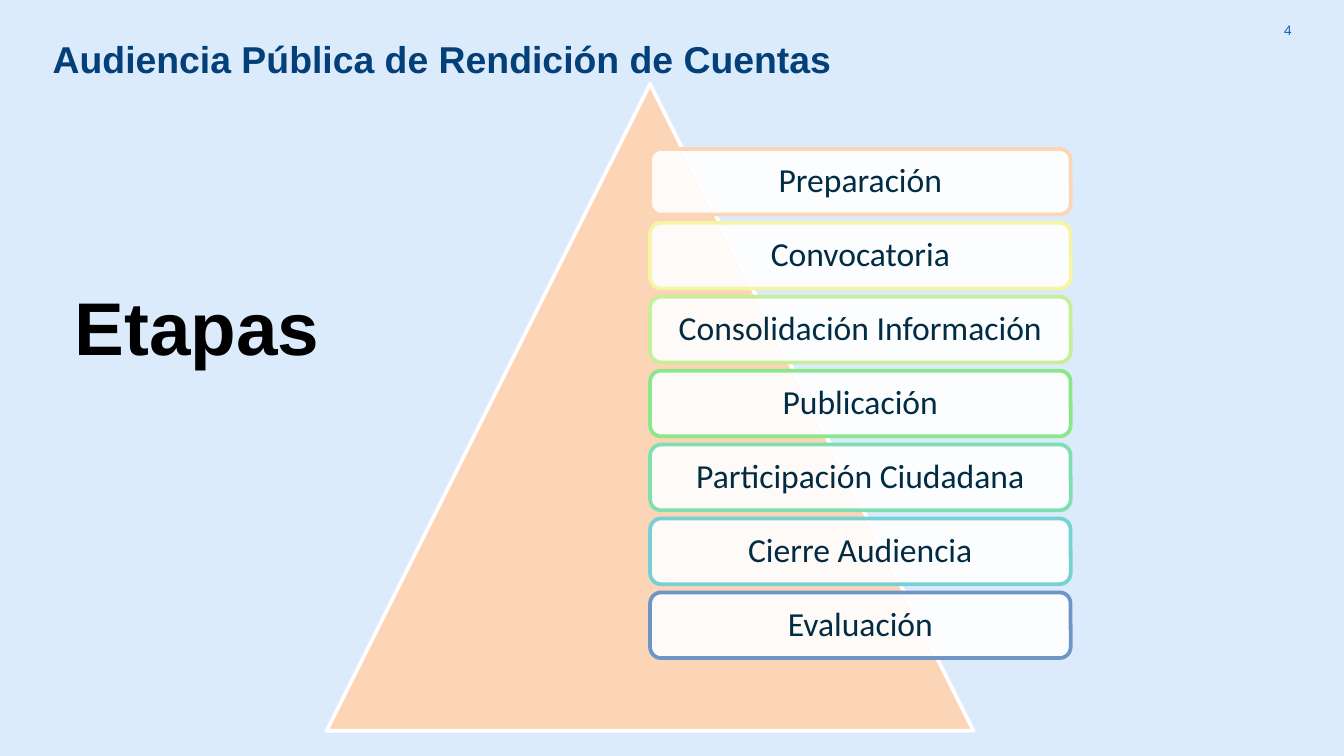
from dataclasses import dataclass

from lxml.etree import SubElement
from pptx import Presentation
from pptx.dml.color import RGBColor
from pptx.enum.shapes import MSO_SHAPE as Shape
from pptx.enum.text import MSO_ANCHOR as Anchor, MSO_AUTO_SIZE as AutoSize, PP_ALIGN as Align
from pptx.oxml.ns import qn
from pptx.util import Pt


@dataclass(frozen=True)
class Theme:
    background: str = "DCEBFB"
    title: str = "033F78"
    heading: str = "000000"
    number: str = "0054BC"
    stage: str = "022B44"
    white: str = "FFFFFF"
    pyramid: str = "FBD5B5"
    title_size: int = 20
    heading_size: int = 40
    stage_size: int = 18
    number_size: int = 7
    outline: int = 2


STAGES = [
    ("Preparación", "FBD5B5"),
    ("Convocatoria", "F6F4A5"),
    ("Consolidación Información", "C5F097"),
    ("Publicación", "8AE88A"),
    ("Participación Ciudadana", "7FDFB0"),
    ("Cierre Audiencia", "75D1D4"),
    ("Evaluación", "6D96C7"),
]


def rgb(value):
    return RGBColor.from_string(value)


def write(shape, text, *, size, color, font="Arial", bold=False, align=Align.LEFT,
          anchor=Anchor.TOP, wrap=True, margins=(7.2, 3.6), spacing=None):
    frame = shape.text_frame
    frame.auto_size = AutoSize.NONE
    frame.word_wrap = wrap
    frame.vertical_anchor = anchor
    frame.margin_left = frame.margin_right = Pt(margins[0])
    frame.margin_top = frame.margin_bottom = Pt(margins[1])
    frame.text = text
    paragraph = frame.paragraphs[0]
    paragraph.alignment = align
    paragraph.line_spacing = spacing
    run_font = paragraph.runs[0].font
    run_font.name, run_font.size, run_font.bold = font, Pt(size), bold
    run_font.color.rgb = rgb(color)


class SlideBuilder:
    def __init__(self, slide, theme):
        self.slide = slide
        self.theme = theme
        slide.background.fill.solid()
        slide.background.fill.fore_color.rgb = rgb(theme.background)

    def title(self, text, left, top, width, height, **style):
        title = self.slide.shapes.title
        title.left, title.top, title.width, title.height = map(Pt, (left, top, width, height))
        write(title, text, **style)

    def text(self, text, left, top, width, height, **style):
        box = self.slide.shapes.add_textbox(*map(Pt, (left, top, width, height)))
        write(box, text, **style)

    def shape(self, kind, left, top, width, height, fill, line, opacity=100):
        shape = self.slide.shapes.add_shape(kind, *map(Pt, (left, top, width, height)))
        shape.shadow.inherit = False
        shape.fill.solid()
        shape.fill.fore_color.rgb = rgb(fill)
        if opacity < 100:
            color = shape.fill._xPr.find(qn("a:solidFill"))[0]
            SubElement(color, qn("a:alpha"), val=str(opacity * 1000))
        shape.line.color.rgb = rgb(line)
        shape.line.width = Pt(self.theme.outline)
        return shape

    def stage(self, name, accent, left, top, width, height):
        card = self.shape(Shape.ROUNDED_RECTANGLE, left, top, width, height,
                          self.theme.white, accent, opacity=90)
        write(card, name, size=self.theme.stage_size, color=self.theme.stage, font="Calibri",
              align=Align.CENTER, anchor=Anchor.MIDDLE, margins=(6.5, 5), spacing=0.9)


def main():
    theme = Theme()
    deck = Presentation()
    deck.slide_width, deck.slide_height = Pt(720), Pt(405)
    page = SlideBuilder(deck.slides.add_slide(deck.slide_layouts[5]), theme)

    # Page number, title and heading
    page.text("4", 656, 0.7, 43, 31, size=theme.number_size, color=theme.number,
              font="Open Sans", align=Align.RIGHT, anchor=Anchor.MIDDLE, margins=(7.2, 7.2))
    page.title("Audiencia Pública de Rendición de Cuentas", 21, 16, 525.6, 55.4,
               size=theme.title_size, color=theme.title, bold=True)
    page.text("Etapas", 33, 147, 147, 55.4, size=theme.heading_size,
              color=theme.heading, bold=True, wrap=False)

    # Pyramid with the stages stacked over its right half
    page.shape(Shape.ISOSCELES_TRIANGLE, 175, 45, 346.5, 346.5, theme.pyramid, theme.white)
    first_top, pitch = 79.8, 39.6
    for index, (name, accent) in enumerate(STAGES):
        page.stage(name, accent, 348.3, first_top + index * pitch, 225.3, 35.2)

    deck.save("out.pptx")


if __name__ == "__main__":
    main()
